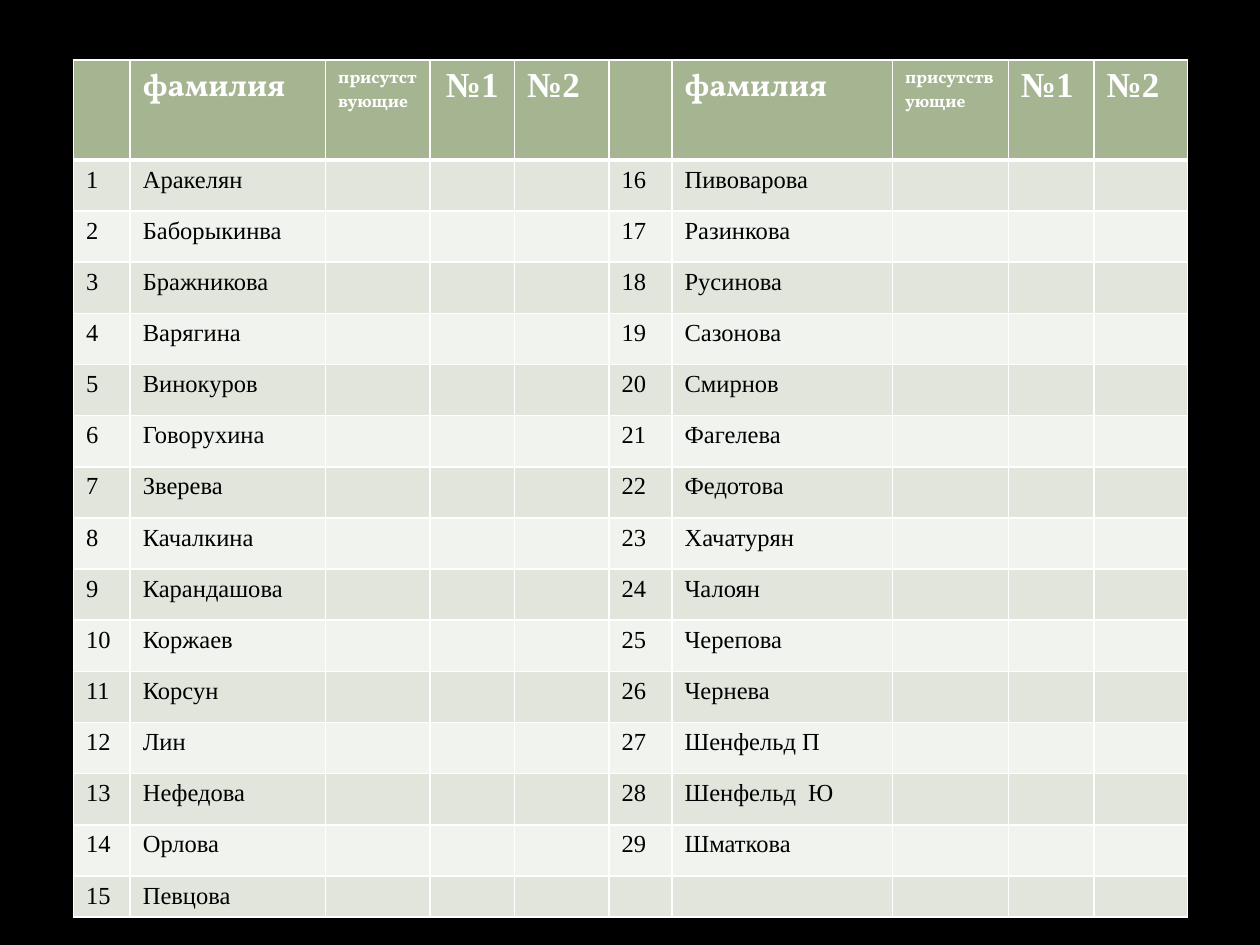
from typing import NamedTuple

from lxml import etree
from pptx import Presentation
from pptx.dml.color import RGBColor
from pptx.enum import text
from pptx.oxml import ns
from pptx.util import Pt

SERIF = "Times New Roman"
DISPLAY = "Vollkorn"
WHITE, BLACK = "FFFFFF", "000000"
HEADER_FILL = "A5B592"
BAND_FILLS = ("E1E5DC", "F0F3EE")

COLUMN_WIDTHS = (32.4, 111.6, 59.8, 48.2, 54, 36, 126, 66.2, 49, 53.3)
HEADER_HEIGHT, ROW_HEIGHT, LAST_ROW_HEIGHT = 57, 29.25, 23.4
HALF = len(COLUMN_WIDTHS) // 2
NUMBER_INDENT = 18

SURNAMES = (
    "Аракелян", "Баборыкинва", "Бражникова", "Варягина", "Винокуров",
    "Говорухина", "Зверева", "Качалкина", "Карандашова", "Коржаев",
    "Корсун", "Лин", "Нефедова", "Орлова", "Певцова",
    "Пивоварова", "Разинкова", "Русинова", "Сазонова", "Смирнов",
    "Фагелева", "Федотова", "Хачатурян", "Чалоян", "Черепова",
    "Чернева", "Шенфельд П", "Шенфельд  Ю", "Шматкова",
)
STUDENT_ROWS = 15


class Style(NamedTuple):
    size: float
    face: str
    color: str
    bold: bool


class Heading(NamedTuple):
    label: str
    style: Style


BODY = Style(14, SERIF, BLACK, False)
HEADING = Style(18, DISPLAY, WHITE, True)
SMALL_HEADING = HEADING._replace(size=10)
LESSON = Style(20, SERIF, WHITE, True)
HEADINGS = (
    Heading("", HEADING),
    Heading("фамилия", HEADING),
    Heading("присутствующие", SMALL_HEADING),
    Heading("№1", LESSON),
    Heading("№2", LESSON),
)


def rgb(value: str) -> RGBColor:
    return RGBColor.from_string(value)


def apply_style(paragraph, style: Style) -> None:
    font = paragraph.font
    font.size = Pt(style.size)
    font.name = style.face
    font.bold = style.bold
    font.color.rgb = rgb(style.color)


def add_borders(cell, top: float, bottom: float) -> None:
    """Draw white cell borders; the side ones are 1 pt wide."""
    properties = cell._tc.get_or_add_tcPr()
    for side, width in (("L", 1), ("R", 1), ("T", top), ("B", bottom)):
        line = etree.SubElement(properties, ns.qn(f"a:ln{side}"), w=str(Pt(width)))
        solid = etree.SubElement(line, ns.qn("a:solidFill"))
        etree.SubElement(solid, ns.qn("a:srgbClr"), val=WHITE)


def fill_cell(cell, words: str, style: Style, fill: str,
              top: float = 1, bottom: float = 1):
    """Format one cell and return its paragraph."""
    add_borders(cell, top, bottom)
    cell.fill.solid()
    cell.fill.fore_color.rgb = rgb(fill)
    cell.text = words
    paragraph = cell.text_frame.paragraphs[0]
    apply_style(paragraph, style)
    return paragraph


def student_words(row: int, column: int) -> str:
    """Number or surname for a body cell; the mark columns stay empty."""
    half, part = divmod(column, HALF)
    number = half * STUDENT_ROWS + row
    if part > 1 or number > len(SURNAMES):
        return ""
    return (str(number), SURNAMES[number - 1])[part]


def add_register(slide) -> None:
    heights = [HEADER_HEIGHT] + [ROW_HEIGHT] * (STUDENT_ROWS - 1) + [LAST_ROW_HEIGHT]
    register = slide.shapes.add_table(
        len(heights), len(COLUMN_WIDTHS), Pt(42), Pt(34.4),
        Pt(sum(COLUMN_WIDTHS)), Pt(sum(heights))).table
    for column, width in zip(register.columns, COLUMN_WIDTHS):
        column.width = Pt(width)
    for row, height in zip(register.rows, heights):
        row.height = Pt(height)

    for column in range(len(COLUMN_WIDTHS)):
        heading = HEADINGS[column % HALF]
        paragraph = fill_cell(register.cell(0, column), heading.label,
                              heading.style, HEADER_FILL, bottom=3)
        if column == 3:
            paragraph.alignment = text.PP_ALIGN.CENTER
        for row in range(1, len(heights)):
            paragraph = fill_cell(
                register.cell(row, column), student_words(row, column), BODY,
                BAND_FILLS[(row - 1) % 2], top=3 if row == 1 else 1)
            if column == 0:
                hanging = paragraph._p.get_or_add_pPr()
                hanging.set("marL", str(Pt(NUMBER_INDENT)))
                hanging.set("indent", str(Pt(-NUMBER_INDENT)))


def main() -> None:
    deck = Presentation()
    deck.slide_width, deck.slide_height = Pt(720), Pt(540)
    slide = deck.slides.add_slide(deck.slide_layouts[6])
    slide.background.fill.solid()
    slide.background.fill.fore_color.rgb = rgb(BLACK)
    add_register(slide)
    deck.save("out.pptx")


if __name__ == "__main__":
    main()
